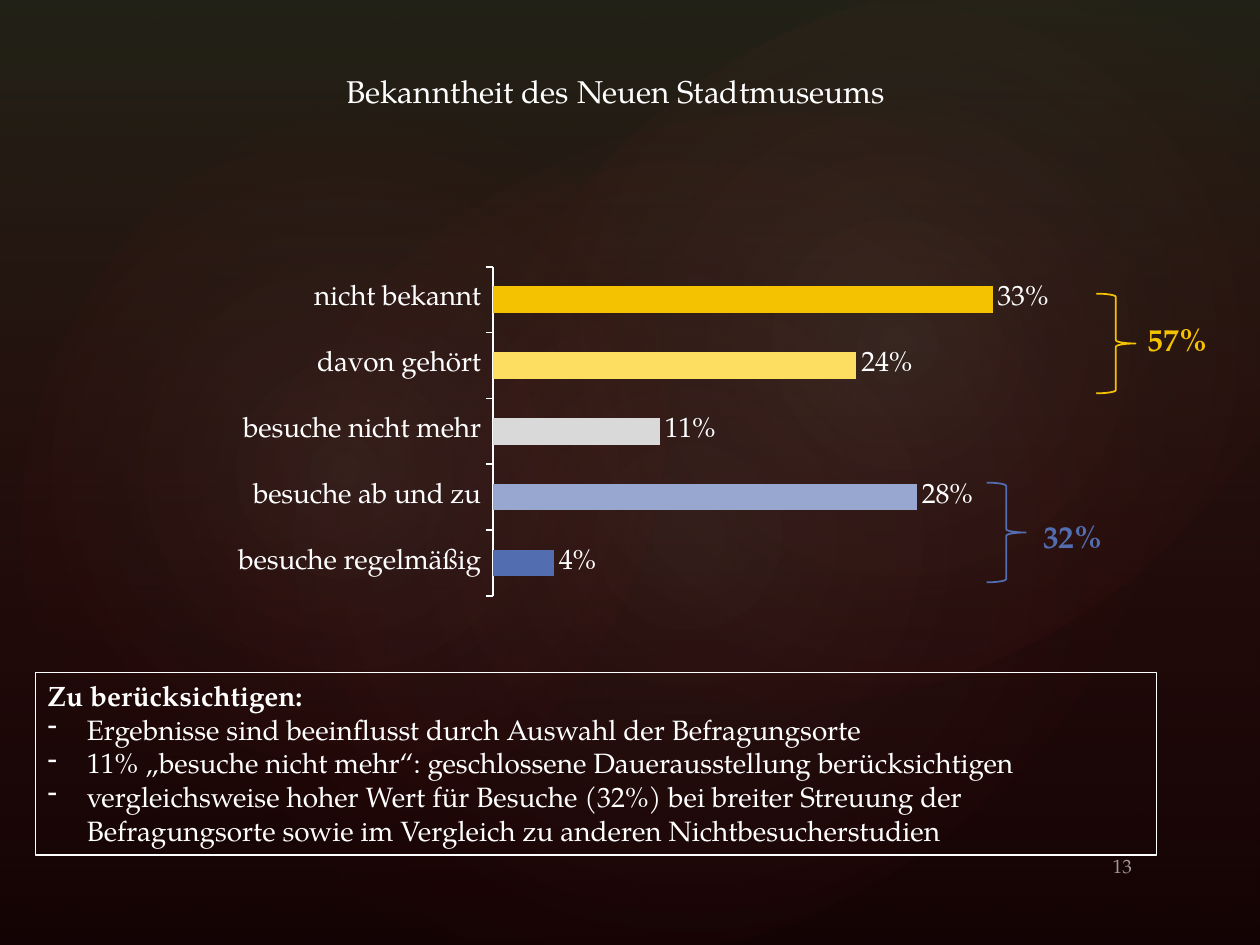
"""Build the slide on how well known the Neues Stadtmuseum is."""
from lxml import etree
from pptx import Presentation
from pptx.chart.data import CategoryChartData
from pptx.dml.color import RGBColor
from pptx.enum import chart as ch, shapes, text
from pptx.oxml import parse_xml
from pptx.oxml.ns import nsdecls, qn
from pptx.util import Cm, Pt

FONT = "TeX Gyre Pagella"
BLACK = RGBColor(0x00, 0x00, 0x00)
WHITE = RGBColor(0xFF, 0xFF, 0xFF)
GOLD = RGBColor(0xF5, 0xC2, 0x01)
PALE_GOLD = RGBColor(0xFE, 0xDE, 0x61)
LIGHT_GREY = RGBColor(0xD9, 0xD9, 0xD9)
PALE_BLUE = RGBColor(0x97, 0xA7, 0xD0)
BLUE = RGBColor(0x52, 0x6D, 0xB0)
OLIVE = RGBColor(0x61, 0x60, 0x42)
RED = RGBColor(0xD1, 0x28, 0x2E)
SAND = RGBColor(0xD2, 0xD1, 0xBE)
GREY = RGBColor(0x7A, 0x7A, 0x7A)
LINEAR = '<a:lin ang="5400000" scaled="0"/>'
RADIAL = '<a:path path="circle"><a:fillToRect l="50000" t="50000" r="50000" b="50000"/></a:path>'


def set_font(font, size, color, bold=False):
    font.name, font.size, font.bold = FONT, Pt(size), bold
    font.color.rgb = color


def add_glow(kind, box, stops, direction, angle=0):
    glow = slide.shapes.add_shape(kind, *map(Cm, box))
    glow.rotation = angle
    glow.shadow.inherit = False
    glow.line.fill.background()
    glow.fill.background()
    stop_xml = "".join(
        f'<a:gs pos="{position * 1000}"><a:srgbClr val="{color}">'
        f'<a:alpha val="{alpha * 1000}"/></a:srgbClr></a:gs>'
        for position, color, alpha in stops)
    gradient = parse_xml(f'<a:gradFill {nsdecls("a")} rotWithShape="1">'
                         f'<a:gsLst>{stop_xml}</a:gsLst>{direction}</a:gradFill>')
    properties = glow._element.spPr
    properties.replace(properties.find(qn("a:noFill")), gradient)


prs = Presentation()
prs.slide_width, prs.slide_height = Cm(25.4), Cm(19.05)
slide = prs.slides.add_slide(prs.slide_layouts[5])
slide.background.fill.solid()
slide.background.fill.fore_color.rgb = BLACK

add_glow(shapes.MSO_SHAPE.RECTANGLE, (0, 0, 25.4, 19.05),
         [(0, OLIVE, 36), (100, RED, 10)], LINEAR)
for box, angle, alpha in [((3.81, 2.9, 20.12, 15.85), 328.7, 7),
                          ((-0.76, 3.25, 15.39, 12.45), 294.3, 8),
                          ((9.09, 0.33, 18.01, 13.21), 328.7, 8)]:
    add_glow(shapes.MSO_SHAPE.OVAL, box, [(0, SAND, alpha), (58, RED, 0)], RADIAL, angle)

title = slide.shapes.title
slide.shapes._spTree.append(title._element)
title.left, title.top, title.width, title.height = map(Cm, (4.93, 1.32, 14.96, 1.02))
title.text = "Bekanntheit des Neuen Stadtmuseums"
title.text_frame.vertical_anchor = text.MSO_ANCHOR.TOP
title.text_frame.paragraphs[0].alignment = text.PP_ALIGN.CENTER
set_font(title.text_frame.paragraphs[0].font, 18, WHITE)

page = slide.shapes.add_textbox(*map(Cm, (17.15, 17.09, 5.92, 1.02)))
page_line = page.text_frame.paragraphs[0]
page.text_frame.word_wrap = True
page_line.text = "13"
page_line.alignment = text.PP_ALIGN.RIGHT
set_font(page_line.font, 11, WHITE)
page_color = page_line.font._element.find(qn("a:solidFill"))[0]
etree.SubElement(page_color, qn("a:alpha"), val="60000")

answers = [("nicht bekannt", 0.33, GOLD), ("davon gehört", 0.24, PALE_GOLD),
           ("besuche nicht mehr", 0.11, LIGHT_GREY), ("besuche ab und zu", 0.28, PALE_BLUE),
           ("besuche regelmäßig", 0.04, BLUE)]
data = CategoryChartData(number_format="0%")
data.categories = [answer for answer, share, color in answers]
data.add_series("Series 1", [share for answer, share, color in answers])
chart = slide.shapes.add_chart(ch.XL_CHART_TYPE.BAR_CLUSTERED,
                               *map(Cm, (4.39, 5.36, 18.21, 7.01)), data).chart
chart.has_legend = False
chart.has_title = False
set_font(chart.font, 16, WHITE)

answer_axis = chart.category_axis
answer_axis.reverse_order = True
answer_axis.major_tick_mark = ch.XL_TICK_MARK.OUTSIDE
answer_axis.format.line.color.rgb = WHITE
answer_axis.format.line.width = Pt(1)
share_axis = chart.value_axis
share_axis.minimum_scale, share_axis.maximum_scale = 0, 0.4
share_axis.has_major_gridlines = False
share_axis.visible = False

bars = chart.plots[0]
bars.gap_width = 150
bars.vary_by_categories = False
bars.has_data_labels = True
bars.data_labels.show_value = True
bars.data_labels.position = ch.XL_LABEL_POSITION.OUTSIDE_END
bars.data_labels.number_format = "0%"
bars.data_labels.number_format_is_linked = False
set_font(bars.data_labels.font, 16, WHITE)
shares = bars.series[0]
shares.format.fill.solid()
shares.format.fill.fore_color.rgb = GREY
for index, (answer, share, color) in enumerate(answers):
    fill = shares.points[index].format.fill
    fill.solid()
    fill.fore_color.rgb = color

plot_area = chart._chartSpace.chart.plotArea
for old_layout in plot_area.findall(qn("c:layout")):
    plot_area.remove(old_layout)
plot_area.insert(0, parse_xml(
    f'<c:layout {nsdecls("c")}><c:manualLayout><c:layoutTarget val="inner"/>'
    '<c:xMode val="edge"/><c:yMode val="edge"/><c:x val="0.305"/><c:y val="0"/>'
    '<c:w val="0.67"/><c:h val="0.95"/></c:manualLayout></c:layout>'))

for total, color, brace_at, total_at in [("57%", GOLD, (22.1, 5.92), (22.89, 6.32)),
                                         ("32%", BLUE, (19.89, 9.73), (20.78, 10.29))]:
    brace = slide.shapes.add_shape(shapes.MSO_SHAPE.RIGHT_BRACE,
                                   *map(Cm, brace_at + (0.79, 2.01)))
    brace.shadow.inherit = False
    brace.fill.background()
    brace.line.color.rgb = color
    brace.line.width = Pt(1)
    total_label = slide.shapes.add_textbox(*map(Cm, total_at + (1.8, 1.02)))
    total_line = total_label.text_frame.paragraphs[0]
    total_line.text = total
    set_font(total_line.font, 18, color, bold=True)

remarks = slide.shapes.add_textbox(*map(Cm, (0.71, 13.56, 22.61, 3.68)))
remarks.line.color.rgb = WHITE
remarks.line.width = Pt(0.75)
remarks.text_frame.word_wrap = True
heading = remarks.text_frame.paragraphs[0]
heading.text = "Zu berücksichtigen:"
set_font(heading.font, 16, WHITE, bold=True)
for remark in ["Ergebnisse sind beeinflusst durch Auswahl der Befragungsorte",
               "11% „besuche nicht mehr“: geschlossene Dauerausstellung berücksichtigen",
               "vergleichsweise hoher Wert für Besuche (32%) bei breiter Streuung der "
               "Befragungsorte sowie im Vergleich zu anderen Nichtbesucherstudien"]:
    item = remarks.text_frame.add_paragraph()
    item.text = remark
    properties = item._p.get_or_add_pPr()
    properties.set("marL", str(Cm(0.79)))
    properties.set("indent", str(-Cm(0.79)))
    etree.SubElement(properties, qn("a:buChar"), char="-")
    set_font(item.font, 16, WHITE)

prs.save("out.pptx")
